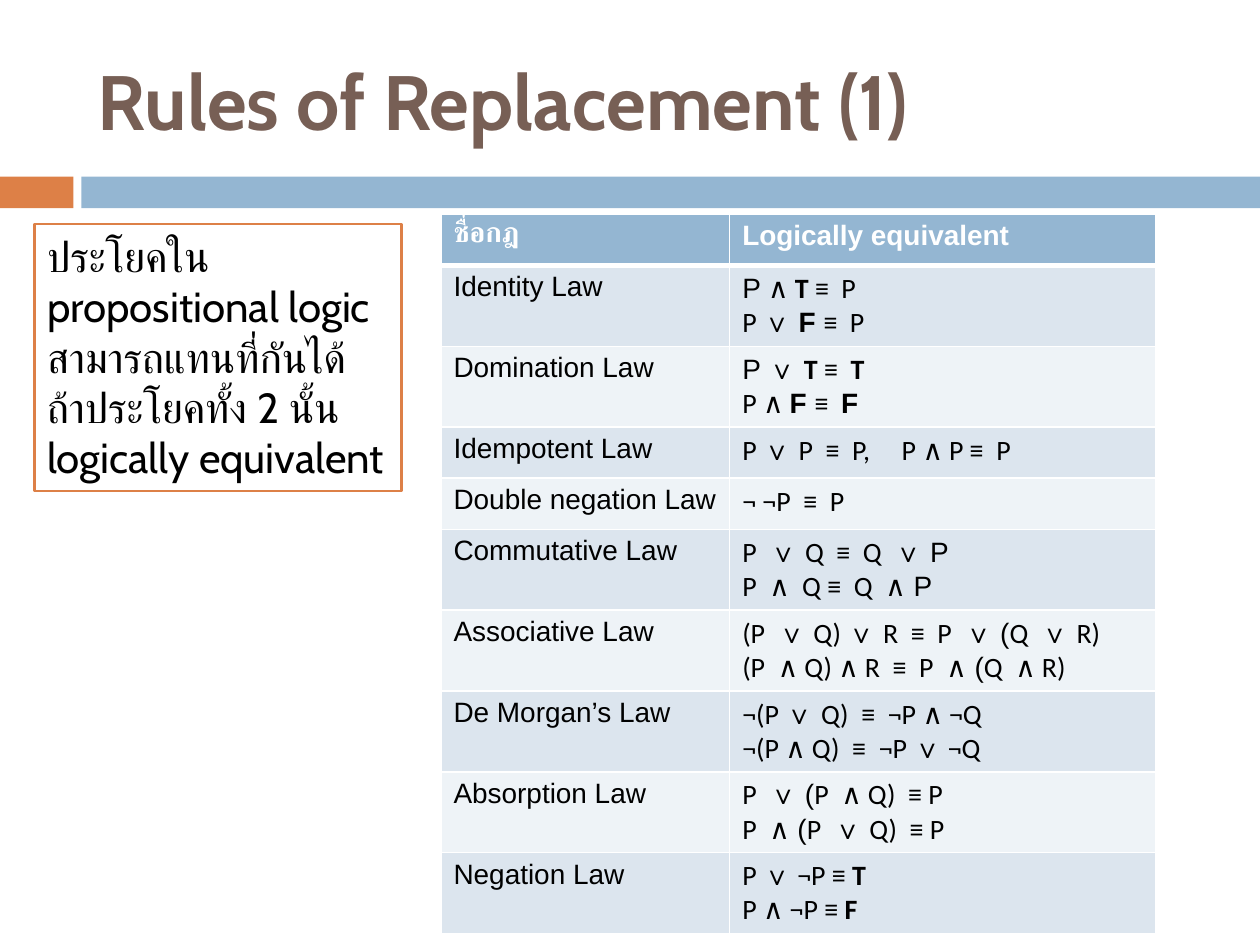
from lxml import etree
from pptx import Presentation
from pptx import util as u
from pptx.dml.color import RGBColor
from pptx.enum import shapes, text
from pptx.oxml import ns

ORANGE = RGBColor(0xDD, 0x80, 0x47)
BLUE = RGBColor(0x94, 0xB6, 0xD2)
BROWN = RGBColor(0x77, 0x5F, 0x55)
DARK_BAND = RGBColor(0xDC, 0xE5, 0xEE)
LIGHT_BAND = RGBColor(0xEE, 0xF3, 0xF7)
WHITE = RGBColor(0xFF, 0xFF, 0xFF)
BLACK = RGBColor(0, 0, 0)

HEADINGS = ["ชื่อกฎ", "Logically equivalent"]
ROW_HEIGHTS = {1: 1.03, 2: 1.63}  # by number of formulas
# Formulas are in Calibri; ~ switches to Arial and back, * switches bold
LAWS = [
    ("Identity Law", ["~P ~∧ *T *≡  P", "P ~∨ *F *~≡  P"]),
    ("Domination Law", ["~P ∨ ~*T *≡  *T*", "P ∧ ~*F *~≡  ~*F*~"]),
    ("Idempotent Law", ["P ~∨ ~P  ≡  P,     P ∧ P ≡  P"]),
    ("Double negation Law", ["¬ ¬P  ≡  P"]),
    ("Commutative Law", ["P  ~∨ ~Q  ≡  Q  ~∨ P~", "P  ∧  Q ≡  Q  ∧~ P~"]),
    ("Associative Law", ["(P  ~∨ ~Q) ~∨ ~R  ≡  P  ~∨ (~Q  ~∨ ~R)",
                         "(P  ∧ Q) ∧ R  ≡  P  ∧~ (~Q  ∧ R)"]),
    ("De Morgan’s Law", ["¬(P ~∨ ~Q)  ≡  ¬P ∧ ¬Q", "¬(P ∧ Q)  ≡  ¬P ~∨~ ¬Q"]),
    ("Absorption Law", ["P  ~∨ (~P  ∧ Q)  ≡ P", "P  ∧~ (~P  ~∨ ~Q)  ≡ P"]),
    ("Negation Law", ["P ~∨~ ¬P ≡ *T*", "P ∧ ¬P ≡ *F*"]),
]


def style(run, size, color, font, bold=False):
    run.font.size = u.Pt(size)
    run.font.color.rgb = color
    run.font.name = font
    run.font.bold = bold


def add_bar(slide, left, width, color):
    bar = slide.shapes.add_shape(shapes.MSO_SHAPE.RECTANGLE, u.Cm(left), u.Cm(3.56),
                                 u.Cm(width), u.Cm(0.64))
    bar.shadow.inherit = False
    bar.fill.solid()
    bar.fill.fore_color.rgb = color
    bar.line.fill.background()


def add_text(slide, wording, left, top, width, height, size, color, bold=False):
    box = slide.shapes.add_textbox(u.Cm(left), u.Cm(top), u.Cm(width), u.Cm(height))
    box.text_frame.word_wrap = True
    box.text_frame.text = wording
    style(box.text_frame.paragraphs[0].runs[0], size, color, "Cabin", bold)
    return box


def add_border(cell, side, points):
    line = etree.SubElement(cell._tc.get_or_add_tcPr(), ns.qn("a:ln" + side),
                            w=str(u.Pt(points)))
    fill = etree.SubElement(line, ns.qn("a:solidFill"))
    etree.SubElement(fill, ns.qn("a:srgbClr"), val=str(WHITE))


def paint_cell(cell, color, top, bottom):
    for side, points in (("L", 1), ("R", 1), ("T", top), ("B", bottom)):
        add_border(cell, side, points)
    cell.fill.solid()
    cell.fill.fore_color.rgb = color


def write_label(cell, wording, color, bold=False):
    cell.text_frame.text = wording
    style(cell.text_frame.paragraphs[0].runs[0], 16, color, "Arial", bold)


def write_formulas(cell, formulas):
    frame = cell.text_frame
    for index, formula in enumerate(formulas):
        paragraph = frame.add_paragraph() if index else frame.paragraphs[0]
        for arial, stretch in enumerate(formula.split("~")):
            for bold, piece in enumerate(stretch.split("*")):
                if piece:
                    run = paragraph.add_run()
                    run.text = piece
                    style(run, 16, BLACK, "Arial" if arial % 2 else "Calibri",
                          bold % 2 == 1)


def add_law_table(slide):
    count = len(LAWS) + 1
    table = slide.shapes.add_table(count, 2, u.Cm(8.89), u.Cm(4.32),
                                   u.Cm(14.4), u.Cm(ROW_HEIGHTS[1] * count)).table
    table.columns[0].width = u.Cm(5.82)
    table.columns[1].width = u.Cm(8.58)

    for column, heading in enumerate(HEADINGS):
        cell = table.cell(0, column)
        paint_cell(cell, BLUE, 1, 3)
        write_label(cell, heading, WHITE, True)

    for row, (law, formulas) in enumerate(LAWS, 1):
        table.rows[row].height = u.Cm(ROW_HEIGHTS[len(formulas)])
        for column in range(2):
            paint_cell(table.cell(row, column), DARK_BAND if row % 2 else LIGHT_BAND,
                       3 if row == 1 else 1, 1)
        write_label(table.cell(row, 0), law, BLACK)
        write_formulas(table.cell(row, 1), formulas)


def main():
    deck = Presentation()
    deck.slide_width, deck.slide_height = u.Cm(25.4), u.Cm(19.05)
    slide = deck.slides.add_slide(deck.slide_layouts[6])

    # Title and the two-coloured rule below it
    add_bar(slide, 0, 1.48, ORANGE)
    add_bar(slide, 1.64, 23.76, BLUE)
    title = add_text(slide, "Rules of Replacement (1)", 1.72, 0.64, 22.66, 2.74,
                     44, BROWN, True)
    title.text_frame.vertical_anchor = text.MSO_ANCHOR.MIDDLE

    # Table of laws
    add_law_table(slide)

    # Remark on the left
    remark = add_text(slide, "ประโยคใน propositional logic สามารถแทนที่กันได้ "
                      "ถ้าประโยคทั้ง 2 นั้น logically equivalent",
                      0.7, 4.52, 7.4, 5.38, 24, BLACK)
    remark.text_frame.auto_size = text.MSO_AUTO_SIZE.SHAPE_TO_FIT_TEXT
    remark.fill.solid()
    remark.fill.fore_color.rgb = WHITE
    remark.line.color.rgb = ORANGE
    remark.line.width = u.Pt(1.5)

    deck.save("out.pptx")


if __name__ == "__main__":
    main()
